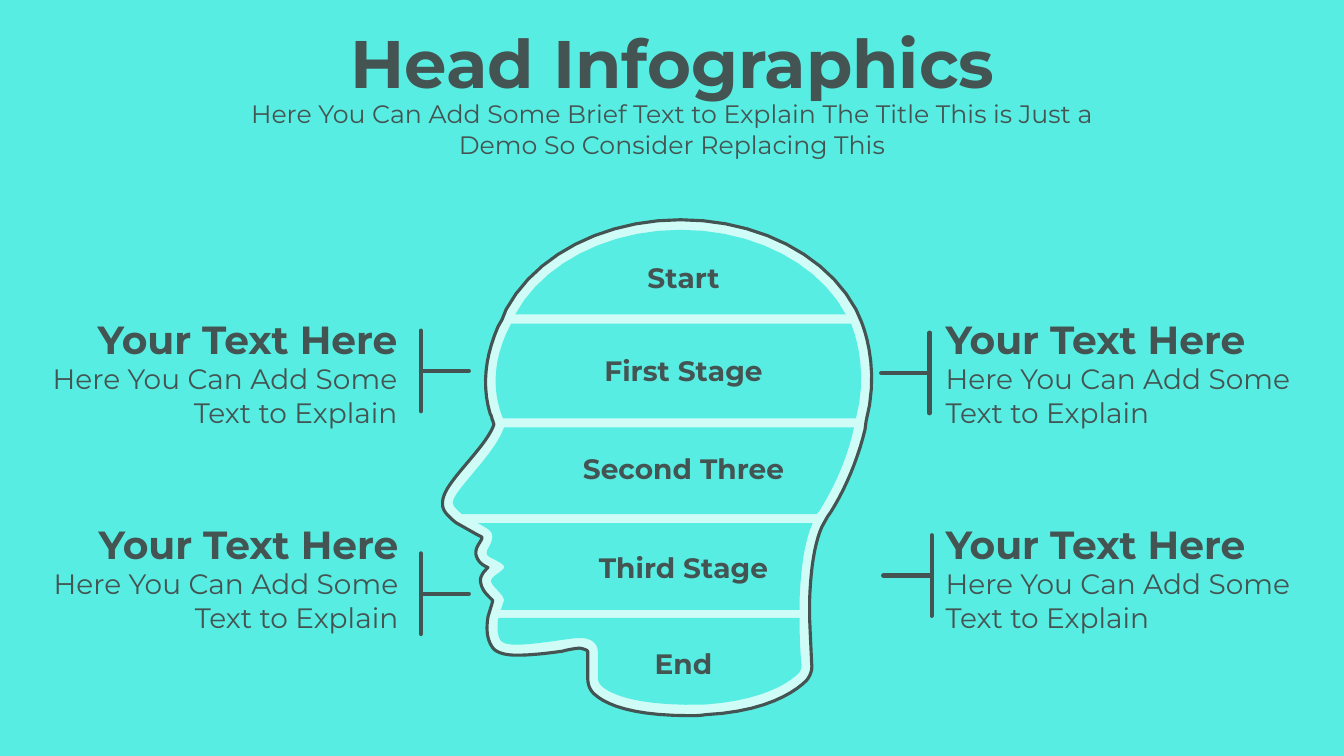
from pptx import Presentation, util as u
from pptx.dml.color import RGBColor
from pptx.enum import shapes, text
from pptx.oxml.ns import qn
from lxml import etree

AQUA = RGBColor(0x58, 0xED, 0xE2)
PALE = RGBColor(0xD0, 0xFC, 0xF8)
DARK = RGBColor(0x44, 0x54, 0x52)
FONT = "Montserrat"
CELL = u.Inches(0.1)  # the slide is a grid of 133.3 columns by 75 rows
LEFT, CENTER, RIGHT = text.PP_ALIGN.LEFT, text.PP_ALIGN.CENTER, text.PP_ALIGN.RIGHT
STEPS = 10  # straight pieces per curve

prs = Presentation()
prs.slide_width, prs.slide_height = u.Inches(13.33), u.Inches(7.5)
s = prs.slides.add_slide(prs.slide_layouts[6])
s.background.fill.solid()
s.background.fill.fore_color.rgb = AQUA


def add_text(parent, words, x, y, w, h, size=20, bold=False, align=CENTER):
    tf = parent.add_textbox(*(int(v * CELL) for v in (x, y, w, h))).text_frame
    tf.word_wrap = True
    tf.auto_size = text.MSO_AUTO_SIZE.SHAPE_TO_FIT_TEXT
    p = tf.paragraphs[0]
    p.alignment = align
    r = p.add_run()
    r.text = words
    r.font.name, r.font.size, r.font.bold = FONT, u.Pt(size), bold
    r.font.color.rgb = DARK


def add_outline(parent, start, parts, fill):
    """Parts of two numbers are straight lines, parts of six are Bezier curves."""
    pts = [start]
    for part in parts:
        if len(part) == 2:
            pts.append(part)
            continue
        x0, y0 = pts[-1]
        x1, y1, x2, y2, x3, y3 = part
        for i in range(1, STEPS + 1):
            t = i / STEPS
            a, b, c, d = (1 - t) ** 3, 3 * t * (1 - t) ** 2, 3 * t * t * (1 - t), t ** 3
            pts.append((a * x0 + b * x1 + c * x2 + d * x3,
                        a * y0 + b * y1 + c * y2 + d * y3))
    pts = [(x * CELL, y * CELL) for x, y in pts]
    fb = parent.build_freeform(*pts[0])
    fb.add_line_segments(pts[1:], close=True)
    sp = fb.convert_to_shape()
    sp.shadow.inherit = False
    sp.fill.solid()
    sp.fill.fore_color.rgb = fill
    sp.line.fill.background()
    return sp


# Title
add_text(s.shapes, "Head Infographics", 27.8, 1.6, 77.8, 9.1, size=48, bold=True)
add_text(s.shapes, "Here You Can Add Some Brief Text to Explain The Title This is Just a "
         "Demo So Consider Replacing This", 23, 9.3, 87.3, 7.1, size=18)

# Head outline, clockwise from the base of the neck
head = s.shapes.add_group_shape().shapes
profile = add_outline(head, (68.4, 71), [
    (62.7, 71, 60.1, 69.9, 59, 68.9), (58.5, 68.5, 58.3, 67.9, 58.3, 67.3),
    (58.3, 64.7), (58.3, 64.5, 58, 64.4, 57.5, 64.3),
    (57.3, 64.3, 56.5, 64.4, 55.8, 64.6), (54.4, 64.8, 52.7, 65, 51.3, 65),
    (50.5, 65, 49.4, 64.9, 48.9, 64.3), (48.3, 63.5, 48.2, 62.5, 48.4, 61.2),
    (48.7, 60.2), (48.8, 60, 48.8, 59.7, 48.9, 59.6),
    (48.8, 59.5, 48.6, 59.3, 48.5, 59.2), (48.1, 58.8, 47.8, 58.4, 47.7, 57.9),
    (47.5, 57.2, 48, 56.7, 48.4, 56.3), (47.9, 56.1, 47.5, 55.8, 47.3, 55.3),
    (47, 54.7, 47.4, 54.1, 47.6, 53.8), (47.7, 53.6, 47.8, 53.5, 47.8, 53.3),
    (47.7, 53.2, 47.4, 53.1, 46.9, 52.8), (45.3, 51.9),
    (45, 51.7, 44.7, 51.4, 44.4, 51.1), (44.1, 50.8, 43.9, 50.4, 43.9, 50.1),
    (43.8, 49.1, 44.5, 48.1, 46.1, 46.2), (47.2, 44.9, 48.6, 43.3, 49, 42.1),
    (48.9, 41.9, 48.9, 41.7, 48.8, 41.6), (48.8, 41.4, 48.7, 41.2, 48.6, 41),
    (47.8, 38.3, 48.1, 35.4, 49.4, 32.4), (49.8, 31.7), (50.2, 30.7),
    (53.1, 25.3, 59.9, 21.8, 67.5, 21.8), (75.2, 21.8, 82, 25.3, 84.9, 30.7),
    (85.3, 31.6), (85.4, 31.8, 87.4, 36.2, 85.9, 41.8), (85.8, 42.6),
    (85.1, 45.5, 83.9, 48.4, 82.4, 50.8), (82.2, 51.1, 82.1, 51.2, 82, 51.4),
    (81.5, 52.3), (80.8, 53.9, 80.4, 56.4, 80.3, 59.6), (80.3, 61.3),
    (80.4, 63.7, 80.5, 65.5, 80.5, 65.8), (80.6, 66.4, 80.4, 67, 80, 67.5),
    (78.8, 68.7, 75.9, 70.6, 70, 70.9), (69.4, 71, 68.9, 71, 68.4, 71),
], PALE)
profile.line.color.rgb = DARK
profile.line.width = u.Pt(2.25)

# Bands inside the head: label, label row, start, outline
bands = [
    ("Start", 25.4, (83.9, 31.2), [
        (51.1, 31.2), (53.7, 26.3, 60.1, 22.8, 67.5, 22.8),
        (75, 22.8, 81.3, 26.3, 83.9, 31.2)]),
    ("First Stage", 34.6, (84.9, 41.5), [
        (49.9, 41.5), (49.8, 41.3, 49.7, 41, 49.6, 40.7),
        (48.7, 37.8, 49.3, 35.1, 50.3, 32.9), (50.7, 32.1), (84.4, 32.1),
        (84.4, 32.1, 86.3, 36.3, 84.9, 41.5)]),
    ("Second Three", 44.3, (84.7, 42.4), [
        (84.1, 45.3, 82.8, 48.2, 81.5, 50.3), (81.4, 50.5, 81.3, 50.7, 81, 51),
        (45.8, 51), (45.6, 50.8, 45.3, 50.6, 45.2, 50.4),
        (45, 50.3, 45, 50.1, 44.9, 49.9), (44.8, 48.8, 49.1, 45.1, 50, 42.4)]),
    ("Third Stage", 54.1, (80.6, 51.9), [
        (79.7, 53.9, 79.4, 56.8, 79.3, 59.6), (79.3, 60.5), (49.7, 60.5),
        (49.8, 60.1, 49.9, 59.8, 50, 59.6), (50, 59, 48.8, 58.2, 48.7, 57.7),
        (48.6, 57.2, 49.9, 56.7, 50, 56.3), (50.1, 55.8, 48.4, 55.4, 48.3, 55),
        (48.1, 54.5, 49, 53.9, 48.8, 53), (48.7, 52.6, 48.1, 52.3, 47.4, 51.9)]),
    ("End", 63.6, (49.5, 61.3), [
        (79.3, 61.3), (79.3, 63.4, 79.4, 65.2, 79.5, 65.9),
        (79.5, 66.3, 79.4, 66.6, 79.2, 66.8), (78.3, 67.7, 75.7, 69.5, 69.9, 69.9),
        (63, 70.1, 60.5, 68.8, 59.7, 68.1), (59.5, 67.9, 59.3, 67.6, 59.3, 67.3),
        (59.3, 64.7), (59.3, 63.8, 58.6, 63.3, 57.6, 63.3),
        (56.5, 63.2, 50.5, 64.6, 49.7, 63.6), (49.3, 63.1, 49.3, 62.2, 49.4, 61.4)]),
]
for label, y, start, parts in bands:
    add_outline(head, start, parts, AQUA)
    add_text(head, label, 56.5, y, 22.6, 4.4, bold=True)

# Callouts: text column and row, alignment, bracket bar, stem end, bracket row
callouts = [
    (1.7, 30.8, RIGHT, 41.75, 46.5, 36.8),
    (92.8, 30.8, LEFT, 92.2, 87.4, 37),
    (1.8, 51.1, RIGHT, 41.75, 46.5, 58.9),
    (92.8, 51.1, LEFT, 92.4, 87.6, 57.1),
]
for x, y, align, bar, stem, mid in callouts:
    g = s.shapes.add_group_shape().shapes
    add_text(g, "Your Text Here", x, y, 38.7, 5.7, size=28, bold=True, align=align)
    add_text(g, "Here You Can Add Some Text to Explain", x, y + 4.6, 38.7, 7.7, align=align)
    for end_x, end_y in ((stem, mid), (bar, mid - 4), (bar, mid + 4)):
        ends = [int(v * CELL) for v in (bar, mid, end_x, end_y)]
        c = s.shapes.add_connector(shapes.MSO_CONNECTOR.STRAIGHT, *ends)
        c.line.color.rgb = DARK
        c.line.width = u.Pt(3)
        c.line._get_or_add_ln().set("cap", "rnd")
        etree.SubElement(c._element.spPr, qn("a:effectLst"))

prs.save("out.pptx")
